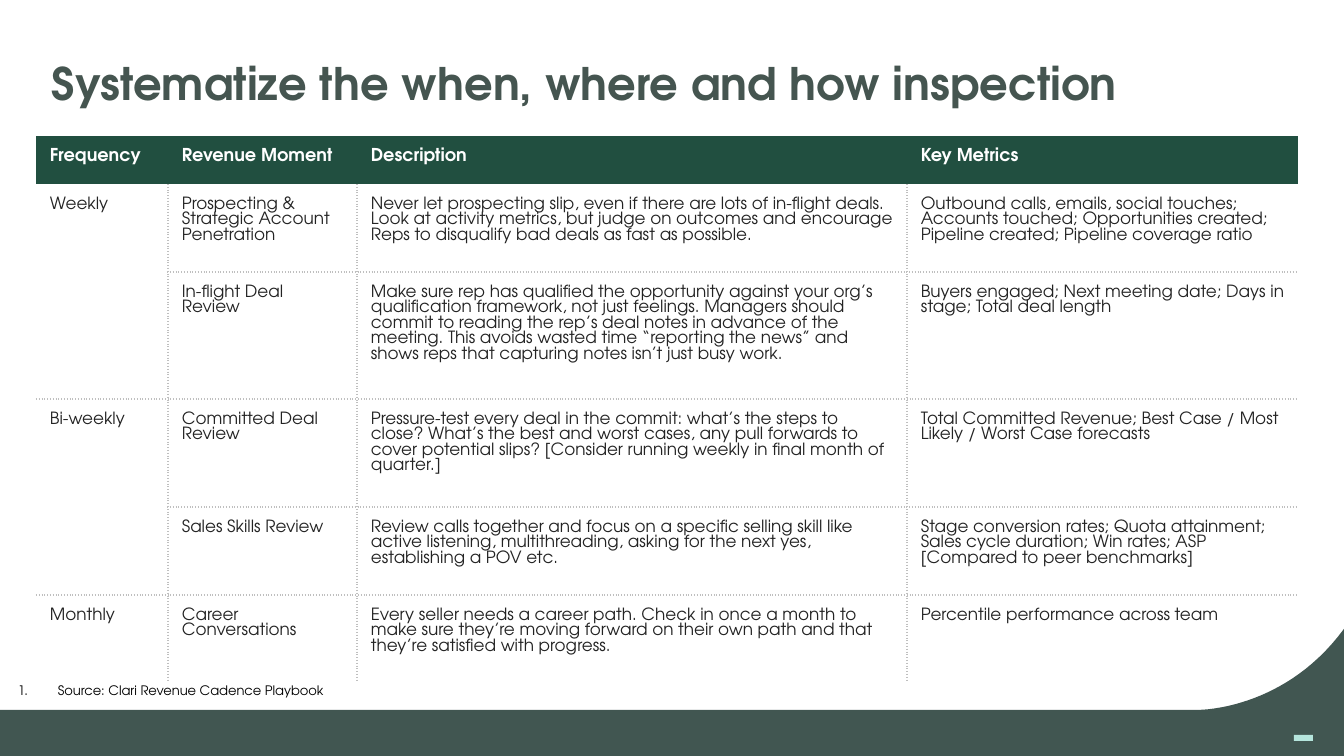
"""Build the inspection cadence slide with its table, source note and footer."""
import pptx
import pptx.dml.color
import pptx.enum.shapes
import pptx.enum.text
import pptx.oxml
import pptx.oxml.ns
import pptx.util

RGB = pptx.dml.color.RGBColor
SLATE = RGB(0x41, 0x56, 0x51)
TITLE = RGB(0x45, 0x55, 0x50)
GREEN = RGB(0x21, 0x4F, 0x40)
MINT = RGB(0xB5, 0xE5, 0xDC)
INK = RGB(0x23, 0x23, 0x23)
RULE = RGB(0xBF, 0xBF, 0xBF)
WHITE = RGB(0xFF, 0xFF, 0xFF)
BLACK = RGB(0x00, 0x00, 0x00)
FONT = "TeX Gyre Adventor"
PX = 914400 / 134.4
FINE = 100
NS = pptx.oxml.ns.nsdecls("a")


def px(*values):
    return [pptx.util.Emu(round(v * PX)) for v in values]


def add_run(p, text, size, color, bold=False):
    r = p.add_run()
    r.text = text
    r.font.name = FONT
    r.font.size = pptx.util.Pt(size)
    r.font.bold = bold
    r.font.color.rgb = color


prs = pptx.Presentation()
prs.slide_width, prs.slide_height = px(1344, 756)
s = prs.slides.add_slide(prs.slide_layouts[5])

curve = [(1198, 710), (1198, 710), (1284, 711), (1344, 629)]
points = []
for i in range(31):
    t = i / 30
    weights = ((1 - t) ** 3, 3 * t * (1 - t) ** 2, 3 * t ** 2 * (1 - t), t ** 3)
    points.append(tuple(sum(w * c[axis] for w, c in zip(weights, curve)) for axis in (0, 1)))
outline = [(0, 710)] + points + [(1344, 756)]
fb = s.shapes.build_freeform(0, 756 * FINE, scale=PX / FINE)
fb.add_line_segments([(x * FINE, y * FINE) for x, y in outline], close=True)
footer = fb.convert_to_shape()
badge = s.shapes.add_shape(pptx.enum.shapes.MSO_SHAPE.RECTANGLE, *px(1294, 735, 19, 6))
for sp, color in ((footer, SLATE), (badge, MINT)):
    sp.shadow.inherit = False
    sp.fill.solid()
    sp.fill.fore_color.rgb = color
    sp.line.fill.background()

title = s.shapes.title
title.left, title.top, title.width, title.height = px(46, 28, 1253, 85)
tf = title.text_frame
tf.word_wrap = True
tf.auto_size = pptx.enum.text.MSO_AUTO_SIZE.NONE
tf.vertical_anchor = pptx.enum.text.MSO_ANCHOR.BOTTOM
tf.margin_left, tf.margin_top, tf.margin_right, tf.margin_bottom = px(6, 3, 6, 3)
p = tf.paragraphs[0]
p.alignment = pptx.enum.text.PP_ALIGN.LEFT
p.line_spacing = 0.9
add_run(p, "Systematize the when, where and how inspection", 24, TITLE, True)

note = s.shapes.add_textbox(*px(-22, 675, 715, 43))
tf = note.text_frame
tf.word_wrap = True
tf.margin_left, tf.margin_top, tf.margin_right, tf.margin_bottom = px(13, 13, 13, 13)
p = tf.paragraphs[0]
pPr = p._p.get_or_add_pPr()
pPr.set("marL", str(px(67)[0]))
pPr.set("indent", str(px(-40)[0]))
pPr.append(pptx.oxml.parse_xml(f'<a:buClr {NS}><a:srgbClr val="{BLACK}"/></a:buClr>'))
pPr.append(pptx.oxml.parse_xml(f'<a:buAutoNum {NS} type="arabicPeriod"/>'))
add_run(p, "Source: Clari Revenue Cadence Playbook", 7, BLACK)

ROWS = [
    ("Frequency", "Revenue Moment", "Description", "Key Metrics"),
    ("Weekly", "Prospecting & Strategic Account Penetration",
     "Never let prospecting slip, even if there are lots of in-flight deals. Look at activity "
     "metrics, but judge on outcomes and encourage Reps to disqualify bad deals as fast as possible.",
     "Outbound calls, emails, social touches; Accounts touched; Opportunities created; "
     "Pipeline created; Pipeline coverage ratio"),
    ("", "In-flight Deal Review",
     "Make sure rep has qualified the opportunity against your org’s qualification framework, "
     "not just feelings. Managers should commit to reading the rep’s deal notes in advance of the "
     "meeting. This avoids wasted time “reporting the news” and shows reps that capturing notes "
     "isn’t just busy work.",
     "Buyers engaged; Next meeting date; Days in stage; Total deal length"),
    ("Bi-weekly", "Committed Deal Review",
     "Pressure-test every deal in the commit: what’s the steps to close? What’s the best and worst "
     "cases, any pull forwards to cover potential slips? [Consider running weekly in final month "
     "of quarter.]",
     "Total Committed Revenue; Best Case / Most Likely / Worst Case forecasts"),
    ("", "Sales Skills Review",
     "Review calls together and focus on a specific selling skill like active listening, "
     "multithreading, asking for the next yes, establishing a POV etc.",
     "Stage conversion rates; Quota attainment; Sales cycle duration; Win rates; ASP "
     "[Compared to peer benchmarks]"),
    ("Monthly", "Career Conversations",
     "Every seller needs a career path. Check in once a month to make sure they’re moving forward "
     "on their own path and that they’re satisfied with progress.",
     "Percentile performance across team"),
]
widths = px(132, 189, 550, 391)
heights = px(48, 88, 127, 108, 88, 85)
frame = s.shapes.add_table(len(ROWS), len(widths), *px(36, 136), sum(widths), sum(heights))
table = frame.table
table.first_row = table.horz_banding = False
style = table._tbl.tblPr.find(pptx.oxml.ns.qn("a:tableStyleId"))
style.text = "{2D5ABB26-0587-4C30-8999-92F81FD0307C}"
for column, width in zip(table.columns, widths):
    column.width = width
for row, height in zip(table.rows, heights):
    row.height = height

for i, texts in enumerate(ROWS):
    for j, text in enumerate(texts):
        cell = table.cell(i, j)
        cell.margin_left, cell.margin_top, cell.margin_right, cell.margin_bottom = px(14, 13, 14, 13)
        merged_above, merged_below = j == 0 and i in (2, 4), j == 0 and i in (1, 3)
        edges = {"lnL": i > 0 and j > 0, "lnR": i > 0 and j < 3,
                 "lnT": i > 1 and not merged_above, "lnB": 0 < i < 5 and not merged_below}
        for tag, shown in edges.items():
            if shown:
                cell._tc.get_or_add_tcPr().append(pptx.oxml.parse_xml(
                    f'<a:{tag} {NS} w="12700"><a:solidFill><a:srgbClr val="{RULE}"/></a:solidFill>'
                    f'<a:prstDash val="dot"/></a:{tag}>'))
        if i == 0:
            cell.fill.solid()
            cell.fill.fore_color.rgb = GREEN
        else:
            cell.fill.background()
        if text:
            p = cell.text_frame.paragraphs[0]
            add_run(p, text, 9 if i else 9.5, INK if i else WHITE, i == 0)

for i in (1, 3):
    table.cell(i, 0).merge(table.cell(i + 1, 0))

prs.save("out.pptx")
